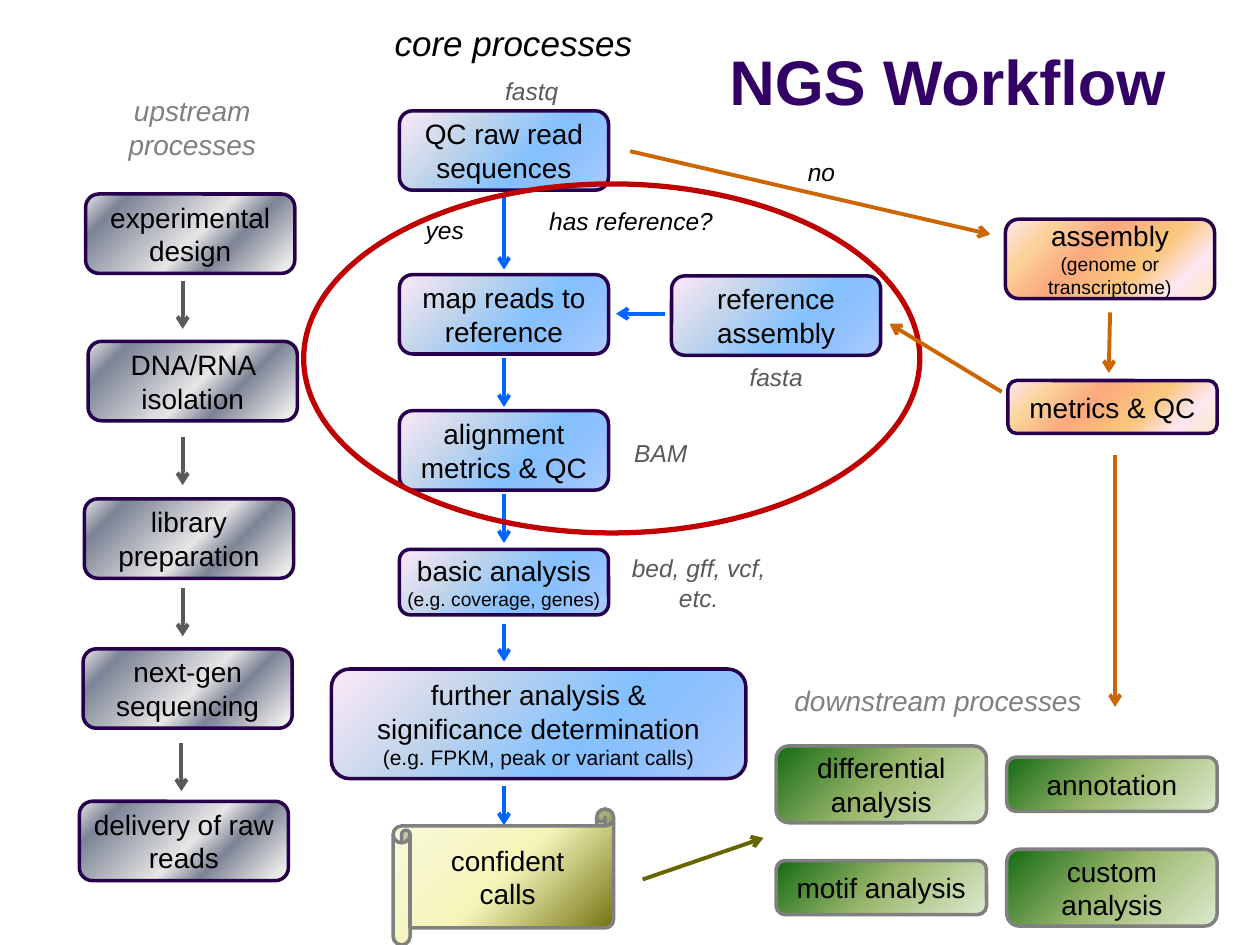
from dataclasses import dataclass

from lxml.etree import SubElement
from pptx import Presentation
from pptx.dml.color import RGBColor
from pptx.enum.shapes import MSO_CONNECTOR, MSO_SHAPE
from pptx.enum.text import MSO_ANCHOR, PP_ALIGN
from pptx.oxml.ns import qn
from pptx.util import Inches, Pt

ROUNDED = MSO_SHAPE.ROUNDED_RECTANGLE
SCROLL = MSO_SHAPE.HORIZONTAL_SCROLL
ELLIPSE = MSO_SHAPE.OVAL
STRAIGHT = MSO_CONNECTOR.STRAIGHT
MIDDLE = MSO_ANCHOR.MIDDLE
CENTER = PP_ALIGN.CENTER

CELL = Inches(0.1)
COLUMNS, ROWS = 100, 75
BOX_COLS, BOX_ROWS = 16.6, 6.3
LABEL_ROWS = 3.4

BLACK = RGBColor(0, 0, 0)
GRAY = RGBColor(0x80, 0x80, 0x80)
DARK_GRAY = RGBColor(0x59, 0x59, 0x59)
INDIGO = RGBColor(0x26, 0x00, 0x4D)
PURPLE = RGBColor(0x33, 0x00, 0x66)
BLUE = RGBColor(0x00, 0x66, 0xFF)
ORANGE = RGBColor(0xCC, 0x66, 0x00)
OLIVE = RGBColor(0x66, 0x66, 0x00)
RED = RGBColor(0xC0, 0x00, 0x00)


def stops(*pairs):
    """Turn (position, hex colour) pairs into gradient stops."""
    return [(position, RGBColor.from_string(code)) for position, code in pairs]


SILVER_FADE = stops((0, "FFFFFF"), (7, "E6E6E6"), (32, "7D8496"),
                    (47, "E6E6E6"), (85, "7D8496"), (100, "E6E6E6"))
BLUE_FADE = stops((0, "5E9EFF"), (40, "85C2FF"), (70, "C4D6EB"), (100, "FFEBFA"))
PEACH_FADE = stops((0, "FBEAC7"), (18, "FEE7F2"), (36, "FAC77D"),
                   (61, "FBA97D"), (82, "FBD49C"), (100, "FEE7F2"))
GREEN_FADE = stops((0, "DDEBCF"), (50, "9CB86E"), (100, "156B13"))
CREAM_FADE = stops((0, "666600"), (50, "F5F5BA"), (100, "F9F9DE"))

HEADING = {"size": Pt(16), "italic": True}
NOTE = {"size": Pt(14), "italic": True}


@dataclass
class Box:
    """A region of the page, measured in grid cells."""
    left: float
    top: float
    cols: float
    rows: float

    def place(self, col, row, cols, rows):
        """Return the page position and size of a part of the region."""
        return [round(n * CELL) for n in (self.left + col, self.top + row, cols, rows)]


def write(frame, lines, color, **formats):
    """Write centred (text, formats) paragraphs into a text frame."""
    frame.word_wrap = True
    frame.vertical_anchor = MIDDLE
    for index, (text, extra) in enumerate(lines):
        para = frame.paragraphs[0] if index == 0 else frame.add_paragraph()
        para.alignment = CENTER
        span = para.add_run()
        span.text = text
        span.font.color.rgb = color
        for name, value in {"name": "Arial", **formats, **extra}.items():
            setattr(span.font, name, value)


def add_label(page, box, spot, text, color=BLACK, **formats):
    """Add a free-standing line of text."""
    label = page.shapes.add_textbox(*box.place(*spot))
    write(label.text_frame, [(text, {})], color, **formats)


def fade(shape, gradient, alpha):
    """Fill a shape with a diagonal gradient whose first stop may be sheer."""
    shape.fill.gradient()
    shape.fill.gradient_angle = 135
    stop_list = shape.fill.gradient_stops and shape._element.spPr.find(
        qn("a:gradFill")).find(qn("a:gsLst"))
    stop_list.clear()
    for position, color in gradient:
        stop = SubElement(stop_list, qn("a:gs"), pos=str(position * 1000))
        tint = SubElement(stop, qn("a:srgbClr"), val=str(color))
        if position == 0 and alpha < 100:
            SubElement(tint, qn("a:alpha"), val=str(alpha * 1000))


def add_step(page, box, spot, lines, gradient, outline=INDIGO, kind=ROUNDED,
             alpha=100, inset=0.05):
    """Add a gradient-filled step with its caption."""
    step = page.shapes.add_shape(kind, *box.place(*spot))
    step.shadow.inherit = False
    fade(step, gradient, alpha)
    step.line.color.rgb = outline
    step.line.width = Pt(2)
    frame = step.text_frame
    margins = {"margin_left": inset, "margin_right": inset,
               "margin_top": 0, "margin_bottom": 0}
    for name, value in margins.items():
        setattr(frame, name, Inches(value))
    write(frame, lines, BLACK, size=Pt(16))


def add_arrow(page, box, start, end, color):
    """Add a straight arrow between two grid points."""
    x1, y1, x2, y2 = box.place(*start, 0, 0)[:2] + box.place(*end, 0, 0)[:2]
    arrow = page.shapes.add_connector(STRAIGHT, x1, y1, x2, y2)
    arrow.line.color.rgb = color
    arrow.line.width = Pt(2.25)
    SubElement(arrow.line._get_or_add_ln(), qn("a:tailEnd"), type="arrow")
    SubElement(arrow._element.spPr, qn("a:effectLst"))


def upstream(page, box):
    """Draw the column of laboratory steps."""
    add_label(page, box, (0, 0, box.cols, 6.4), "upstream processes", GRAY, **HEADING)
    steps = [(1, 8.5, "experimental design"), (1.2, 20.2, "DNA/RNA isolation"),
             (0.9, 32.7, "library preparation"), (0.8, 44.6, "next-gen sequencing"),
             (0.5, 56.7, "delivery of raw reads")]
    for col, row, text in steps:
        add_step(page, box, (col, row, BOX_COLS, BOX_ROWS), [(text, {})], SILVER_FADE)
    for col, row in [(8.7, 15.4), (8.7, 27.8), (8.7, 39.8), (8.6, 52.1)]:
        add_arrow(page, box, (col, row), (col, row + 3.8), DARK_GRAY)


def core(page, box):
    """Draw the core read-processing steps and the reference loop."""
    add_label(page, box, (5.7, 1.2, 22.1, 4.4), "core processes", size=Pt(20), italic=True)
    steps = [
        ((7.7, 8.8, BOX_COLS, BOX_ROWS), [("QC raw read sequences", {})], 0.05),
        ((7.7, 21.8, BOX_COLS, BOX_ROWS), [("map reads to reference", {})], 0.05),
        ((7.7, 32.6, BOX_COLS, BOX_ROWS), [("alignment metrics & QC", {})], 0.05),
        ((29.3, 21.9, BOX_COLS, BOX_ROWS), [("reference assembly", {})], 0.05),
        ((7.7, 43.6, BOX_COLS, 5.2),
         [("basic analysis", {}), ("(e.g. coverage, genes)", {"size": Pt(11)})], 0),
        ((2.3, 53.1, 32.9, 8.7),
         [("further analysis & significance determination", {}),
          ("(e.g. FPKM, peak or variant calls)", {"size": Pt(12)})], 0.2),
    ]
    for spot, lines, inset in steps:
        add_step(page, box, spot, lines, BLUE_FADE, alpha=50, inset=inset)
    add_step(page, box, (7.2, 64.2, 17.5, 10.8), [("confident calls", {})],
             CREAM_FADE, GRAY, SCROLL, inset=0.15)
    for start, end in [(15.4, 21.4), (28.4, 32.3), (39.2, 43.1), (49.5, 52.5), (62.4, 65.5)]:
        add_arrow(page, box, (16, start), (16, end), BLUE)
    add_arrow(page, box, (28.8, 24.9), (24.9, 24.9), BLUE)
    notes = [((12, 5.5, 12.4, LABEL_ROWS), "fastq", DARK_GRAY),
             ((31.4, 28.2, 12.4, LABEL_ROWS), "fasta", DARK_GRAY),
             ((22.6, 34.2, 11.7, LABEL_ROWS), "BAM", DARK_GRAY),
             ((23.9, 43.4, 15.1, 5.7), "bed, gff, vcf, etc.", DARK_GRAY),
             ((17.3, 15.8, 17.6, LABEL_ROWS), "has reference?", BLACK),
             ((7.4, 16.5, 7.8, LABEL_ROWS), "yes", BLACK)]
    for spot, text, color in notes:
        add_label(page, box, spot, text, color, **NOTE)
    loop = page.shapes.add_shape(ELLIPSE, *box.place(0.1, 14.6, 48.9, 27.7))
    loop.shadow.inherit = False
    loop.fill.background()
    loop.line.color.rgb = RED
    loop.line.width = Pt(3)


def assembly(page, box):
    """Draw the branch taken when there is no reference."""
    add_step(page, box, (29.8, 6.4, BOX_COLS, BOX_ROWS),
             [("assembly", {}), ("(genome or transcriptome)", {"size": Pt(11)})], PEACH_FADE)
    add_step(page, box, (30, 19.2, BOX_COLS, 4.2), [("metrics & QC", {})], PEACH_FADE)
    add_label(page, box, (11.3, 0.9, 7.8, LABEL_ROWS), "no", **NOTE)
    arrows = [((0, 1), (28.6, 7.6)), ((38.1, 13.8), (38, 18.6)),
              ((38.5, 25.1), (38.5, 45.1)), ((29.5, 20.1), (20.6, 14.7))]
    for start, end in arrows:
        add_arrow(page, box, start, end, ORANGE)


def downstream(page, box):
    """Draw the block of follow-on analyses."""
    add_label(page, box, (10.3, 0.7, 26.3, 3.7), "downstream processes", GRAY, **HEADING)
    steps = [(10.6, 6.2, 6.1, ["differential analysis"]), (28.9, 7.1, 4.3, ["annotation"]),
             (10.6, 15.3, 4.3, ["motif analysis"]), (28.9, 14.4, 6.1, ["custom", "analysis"])]
    for col, row, rows, words in steps:
        add_step(page, box, (col, row, 16.7, rows), [(word, {}) for word in words],
                 GREEN_FADE, GRAY)
    add_arrow(page, box, (0, 16.8), (9.6, 13.5), OLIVE)


def main():
    """Build the workflow slide and save it."""
    deck = Presentation()
    deck.slide_width, deck.slide_height = COLUMNS * CELL, ROWS * CELL
    page = deck.slides.add_slide(deck.slide_layouts[6])
    upstream(page, Box(5.8, 6.9, 18.9, 63))
    core(page, Box(24, 0, 49, ROWS))
    assembly(page, Box(50, 11, 46.6, 45.1))
    downstream(page, Box(51, 53, 45.6, 20.5))
    add_label(page, Box(50.4, 2.3, 49.6, 8.2), (0, 0, 49.6, 8.2), "NGS Workflow",
              PURPLE, size=Pt(36), bold=True)
    deck.save("out.pptx")


if __name__ == "__main__":
    main()
